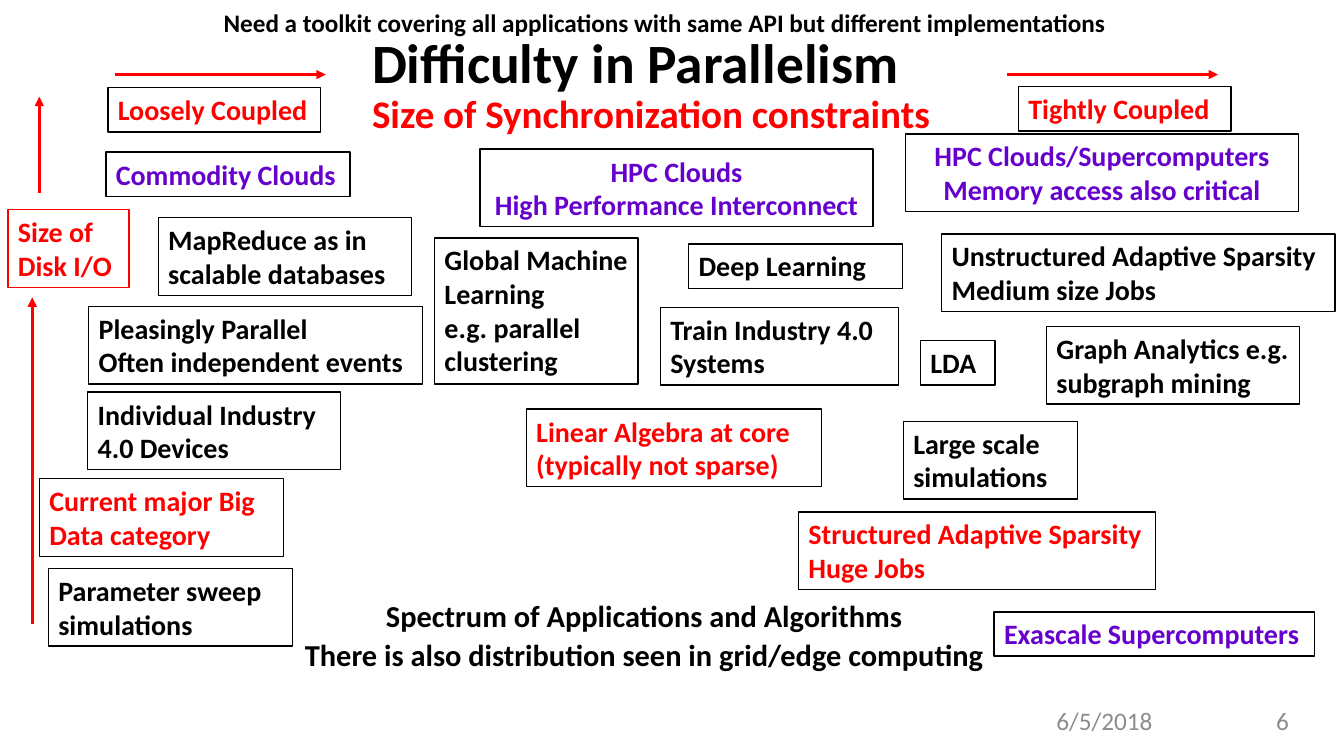
import pptx
import pptx.dml.color
import pptx.enum.shapes
import pptx.enum.text
import pptx.oxml.ns
import pptx.util
import lxml.etree

EMU_PER_PX = 9144  # 100 px to the inch
BLACK = pptx.dml.color.RGBColor(0x00, 0x00, 0x00)
WHITE = pptx.dml.color.RGBColor(0xFF, 0xFF, 0xFF)
RED = pptx.dml.color.RGBColor(0xFF, 0x00, 0x00)
PURPLE = pptx.dml.color.RGBColor(0x66, 0x00, 0xCC)
GREY = pptx.dml.color.RGBColor(0x8C, 0x8C, 0x8C)
LEFT = pptx.enum.text.PP_ALIGN.LEFT
CENTER = pptx.enum.text.PP_ALIGN.CENTER
RIGHT = pptx.enum.text.PP_ALIGN.RIGHT
FIT_SHAPE = pptx.enum.text.MSO_AUTO_SIZE.SHAPE_TO_FIT_TEXT
NO_FIT = pptx.enum.text.MSO_AUTO_SIZE.NONE

# left, top, width, height, lines, text colour, alignment
BOXES = [
    # Coupling and platforms
    (107, 87, 211, 44, ["Loosely Coupled"], RED, LEFT),
    (1010, 86, 211, 44, ["Tightly Coupled"], RED, LEFT),
    (105, 151, 242, 44, ["Commodity Clouds"], PURPLE, LEFT),
    (476, 148, 390, 77, ["HPC Clouds", "High Performance Interconnect"], PURPLE, CENTER),
    (898, 133, 390, 77, ["HPC Clouds/Supercomputers", "Memory access also critical"], PURPLE, CENTER),
    (986, 607, 318, 44, ["Exascale Supercomputers"], PURPLE, LEFT),
    # Loosely coupled applications
    (157, 216, 251, 77, ["MapReduce as in scalable databases"], BLACK, LEFT),
    (88, 304, 331, 77, ["Pleasingly Parallel", "Often independent events"], BLACK, LEFT),
    (87, 389, 251, 77, ["Individual Industry 4.0 Devices"], BLACK, LEFT),
    (39, 475, 242, 77, ["Current major Big Data category"], RED, LEFT),
    (48, 564, 242, 77, ["Parameter sweep simulations"], BLACK, LEFT),
    # Machine learning
    (431, 236, 202, 145, ["Global Machine Learning", "e.g. parallel clustering"], BLACK, LEFT),
    (683, 242, 212, 44, ["Deep Learning"], BLACK, LEFT),
    (655, 305, 236, 77, ["Train Industry 4.0 Systems"], BLACK, LEFT),
    (522, 406, 293, 77, ["Linear Algebra at core (typically not sparse)"], RED, LEFT),
    # Tightly coupled applications
    (934, 232, 390, 77, ["Unstructured Adaptive Sparsity", "Medium size Jobs"], BLACK, LEFT),
    (1038, 324, 251, 77, ["Graph Analytics e.g. subgraph mining"], BLACK, LEFT),
    (913, 338, 74, 44, ["LDA"], BLACK, LEFT),
    (896, 418, 173, 77, ["Large scale simulations"], BLACK, LEFT),
    (792, 508, 354, 77, ["Structured Adaptive Sparsity", "Huge Jobs"], RED, LEFT),
]

# start x, start y, end x, end y
ARROWS = [
    (114, 74, 323, 74),
    (999, 74, 1208, 74),
    (32, 619, 32, 295),
    (39, 191, 39, 96),
]


def px(length):
    return pptx.util.Emu(length * EMU_PER_PX)


def format_font(font, size, color, bold=True):
    values = {"name": "Calibri", "size": pptx.util.Pt(size), "bold": bold}
    for name, value in values.items():
        setattr(font, name, value)
    font.color.rgb = color


def place(shape, left, top, width, height):
    values = {"left": left, "top": top, "width": width, "height": height}
    for name, value in values.items():
        setattr(shape, name, px(value))


def fill_text(text_frame, lines, size, color, alignment=LEFT, bold=True):
    text_frame.word_wrap = True
    for index, line in enumerate(lines):
        paragraph = text_frame.paragraphs[0] if index == 0 else text_frame.add_paragraph()
        paragraph.alignment = alignment
        run = paragraph.add_run()
        run.text = line
        format_font(run.font, size, color, bold)


def add_label(slide, left, top, width, height, text, color, alignment=LEFT, bold=True):
    shape = slide.shapes.add_textbox(px(left), px(top), px(width), px(height))
    fill_text(shape.text_frame, [text], 18, color, alignment, bold)


def add_box(slide, left, top, width, height, lines, color, alignment, line_color=BLACK):
    shape = slide.shapes.add_shape(
        pptx.enum.shapes.MSO_SHAPE.RECTANGLE, px(left), px(top), px(width), px(height))
    shape.shadow.inherit = False
    shape.fill.background()
    shape.line.color.rgb = line_color
    shape.line.width = pptx.util.Pt(1)
    shape.text_frame.vertical_anchor = pptx.enum.text.MSO_ANCHOR.TOP
    fill_text(shape.text_frame, lines, 20, color, alignment)
    shape.text_frame.auto_size = FIT_SHAPE


def add_arrow(slide, start_x, start_y, end_x, end_y):
    arrow = slide.shapes.add_connector(
        pptx.enum.shapes.MSO_CONNECTOR.STRAIGHT,
        px(start_x), px(start_y), px(end_x), px(end_y))
    arrow.line.color.rgb = RED
    arrow.line.width = pptx.util.Pt(2.25)
    qn = pptx.oxml.ns.qn
    head = lxml.etree.SubElement(arrow.line._get_or_add_ln(), qn("a:tailEnd"))
    head.set("type", "triangle")
    lxml.etree.SubElement(arrow._element.spPr, qn("a:effectLst"))


def fill_title(title):
    place(title, 359, 45, 609, 81)
    text_frame = title.text_frame
    text_frame.word_wrap = True
    text_frame.auto_size = NO_FIT
    text_frame.vertical_anchor = pptx.enum.text.MSO_ANCHOR.MIDDLE
    paragraph = text_frame.paragraphs[0]
    paragraph.alignment = LEFT
    paragraph.line_spacing = 0.9
    heading = paragraph.add_run()
    heading.text = "Difficulty in Parallelism"
    format_font(heading.font, 39.6, BLACK)
    paragraph.add_line_break()
    subheading = paragraph.add_run()
    subheading.text = "Size of Synchronization constraints"
    format_font(subheading.font, 27.9, RED)


def fill_body(body):
    place(body, 279, 597, 720, 108)
    lines = ["Spectrum of Applications and Algorithms",
             "There is also distribution seen in grid/edge computing"]
    fill_text(body.text_frame, lines, 21.7, BLACK, CENTER)
    body.text_frame.auto_size = NO_FIT
    for index, paragraph in enumerate(body.text_frame.paragraphs):
        paragraph.line_spacing = 0.7
        paragraph.space_before = pptx.util.Pt(10 if index else 0)
        properties = paragraph._p.get_or_add_pPr()
        properties.set("marL", "0")
        properties.set("indent", "0")
        lxml.etree.SubElement(properties, pptx.oxml.ns.qn("a:buNone"))


def main():
    presentation = pptx.Presentation()
    presentation.slide_width = px(1333)
    presentation.slide_height = px(750)
    slide = presentation.slides.add_slide(presentation.slide_layouts[1])
    slide.background.fill.solid()
    slide.background.fill.fore_color.rgb = WHITE

    # Title and closing statement
    fill_title(slide.shapes.title)
    fill_body(slide.placeholders[1])

    # Arrows along both scales
    for arrow in ARROWS:
        add_arrow(slide, *arrow)

    # Spectrum of applications
    for box in BOXES:
        add_box(slide, *box)
    add_box(slide, 8, 208, 120, 77, ["Size of Disk I/O"], RED, LEFT, line_color=RED)

    # Top remark, date and slide number
    add_label(slide, 212, 2, 917, 40,
              "Need a toolkit covering all applications with same API "
              "but different implementations", BLACK)
    add_label(slide, 1038, 695, 144, 40, "6/5/2018", GREY, bold=False)
    add_label(slide, 1169, 695, 119, 40, "6", GREY, RIGHT, bold=False)

    presentation.save("out.pptx")


if __name__ == "__main__":
    main()
